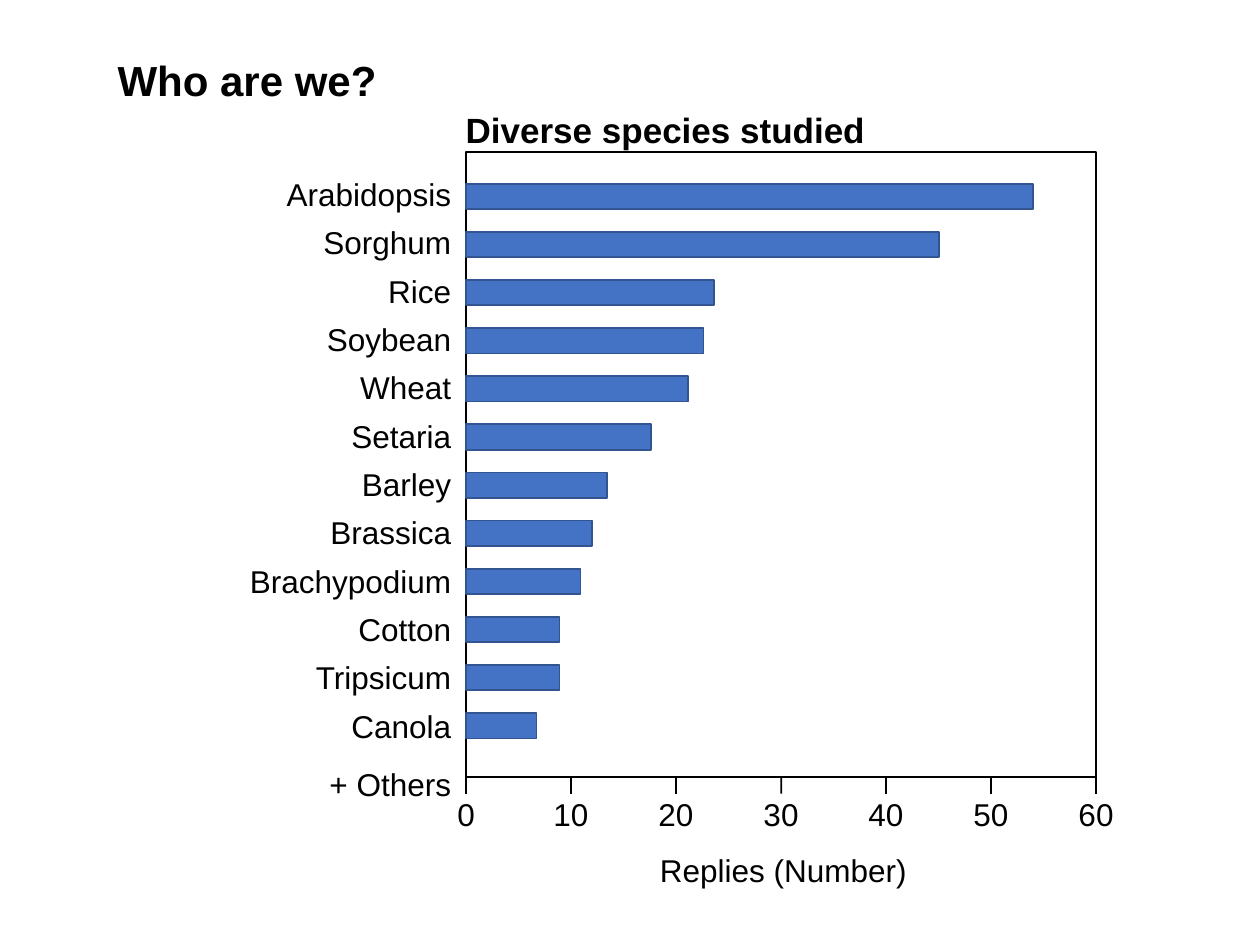
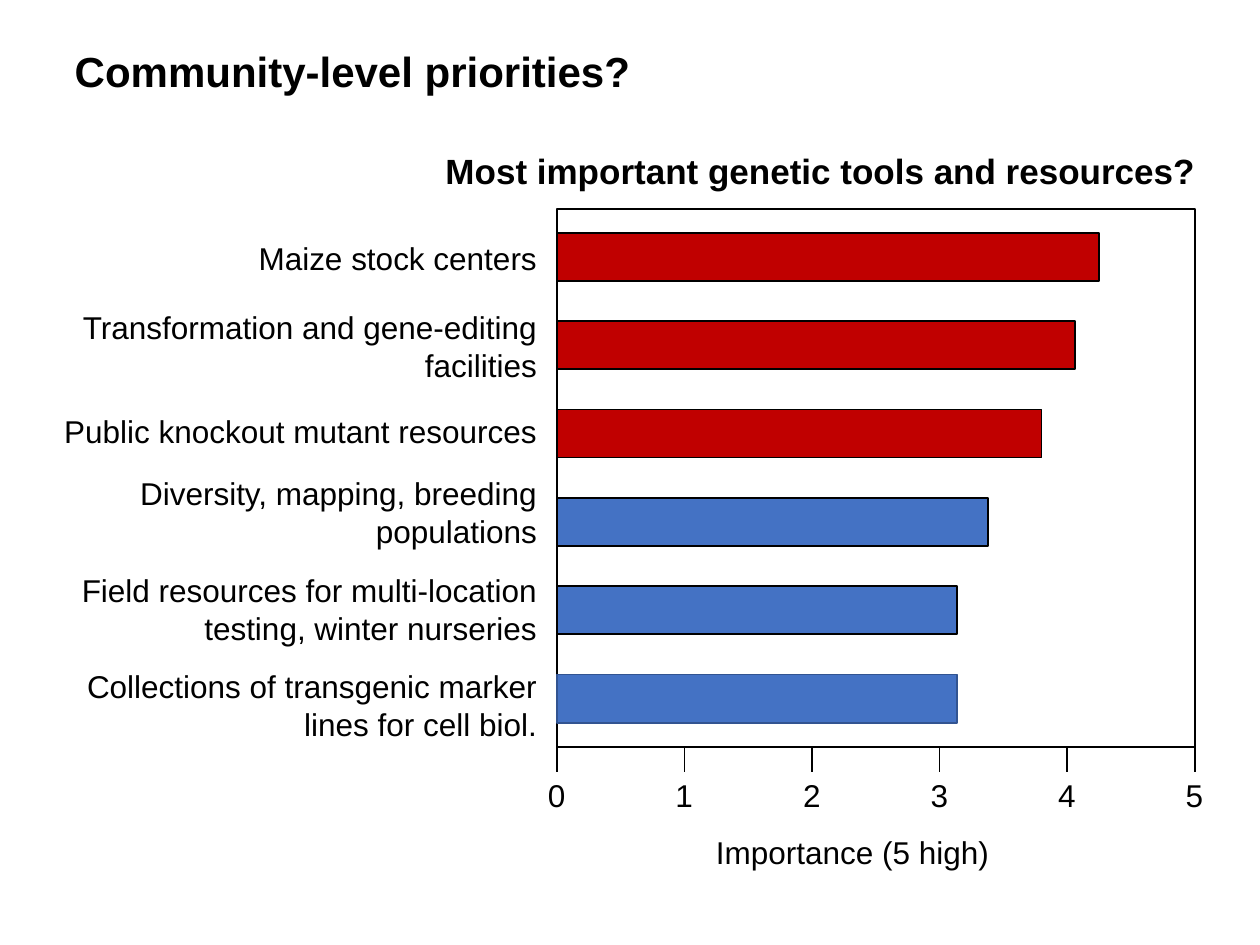
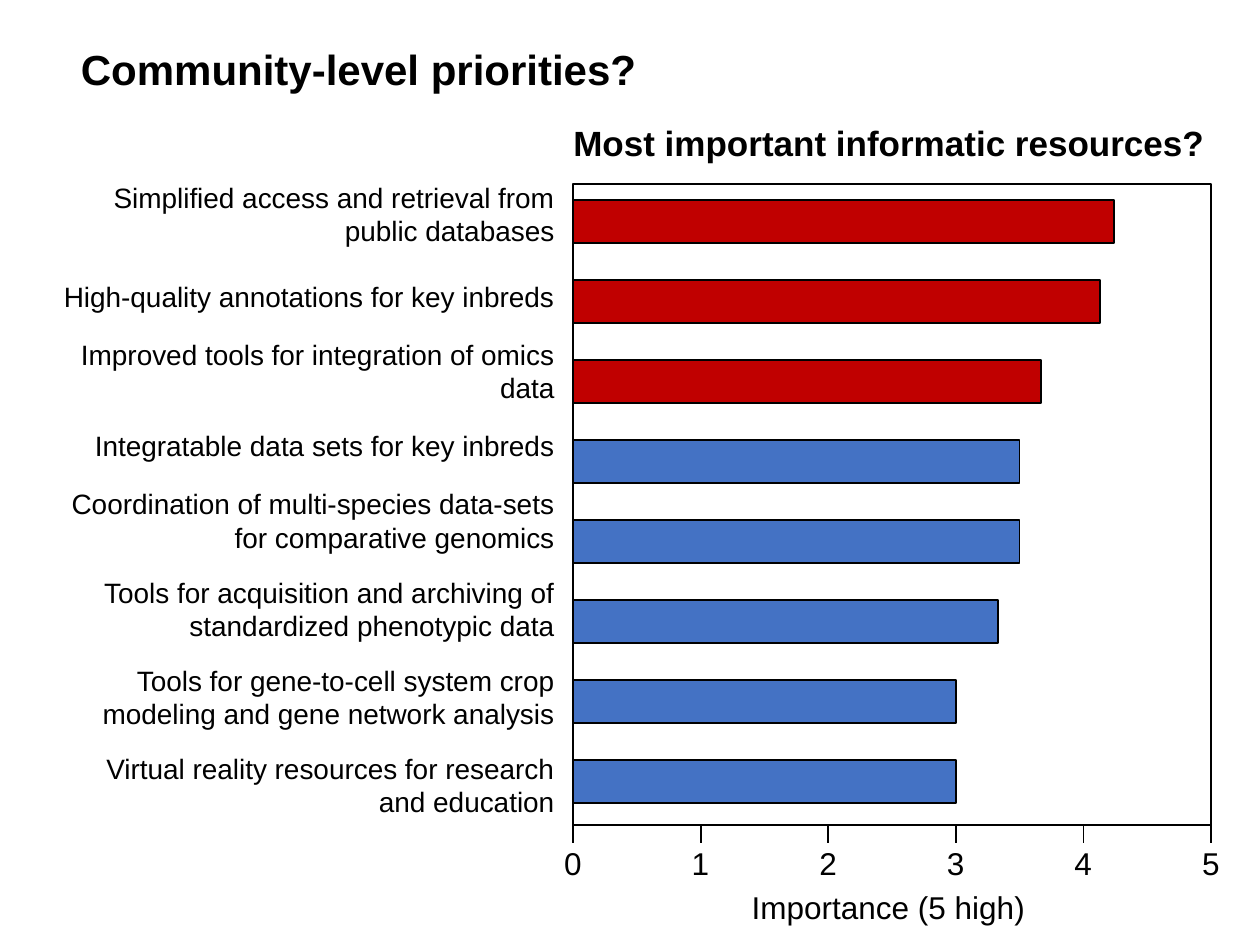
from lxml.etree import SubElement
from pptx import Presentation
from pptx.dml.color import RGBColor
from pptx.enum.shapes import MSO_CONNECTOR, MSO_SHAPE
from pptx.enum.text import MSO_ANCHOR, MSO_AUTO_SIZE, PP_ALIGN
from pptx.oxml.ns import qn
from pptx.util import Pt

COLORS = {
    "text": "000000",
    "blue": "4472C4",
    "blue_edge": "325491",
    "red": "C00000",
    "black": "000000",
}
FONT = "Arial"
TICK_MARGIN = 20
INSET = 7.2

SPECIES = [
    ("Arabidopsis", 54, 0, 6),
    ("Sorghum", 45, 0, 6),
    ("Rice", 23.6, 0, 6),
    ("Soybean", 22.6, 0, 6),
    ("Wheat", 21.1, 0, 6),
    ("Setaria", 17.6, 0, 6),
    ("Barley", 13.4, 0, 6),
    ("Brassica", 12, 0, 6),
    ("Brachypodium", 10.9, 0, 6),
    ("Cotton", 8.9, 0, 6),
    ("Tripsicum", 8.9, 0, 6),
    ("Canola", 6.7, 0, 12),
    ("+ Others", None, 0, 6),
]
GENETIC_TOOLS = [
    ("Maize stock centers", 4.25, 0, 18),
    ("Transformation and gene-editing facilities", 4.06, 0, 12),
    ("Public knockout mutant resources", 3.8, 4, 14),
    ("Diversity, mapping, breeding populations", 3.38, 0, 12),
    ("Field resources for multi-location testing, winter nurseries", 3.14, 0, 12),
    ("Collections of transgenic marker lines for cell biol.", 3.14, 0, 12),
]
INFORMATIC_RESOURCES = [
    ("Simplified access and retrieval from public databases", 4.24, 0, 12),
    ("High-quality annotations for key inbreds", 4.13, 6, 14),
    ("Improved tools for integration of omics data", 3.67, 0, 10),
    ("Integratable data sets for key inbreds", 3.5, 4, 14),
    ("Coordination of multi-species data-sets for comparative genomics", 3.5, 0, 12),
    ("Tools for acquisition and archiving of standardized phenotypic data", 3.33, 0, 12),
    ("Tools for gene-to-cell system crop modeling and gene network analysis", 3, 0, 12),
    ("Virtual reality resources for research and education", 3, 0, 12),
]

BLUE_BAR = ("blue", "blue_edge")
BLACK_EDGED_BAR = ("blue", "black")
RED_BAR = ("red", "black")

SLIDES = [
    {
        "title": ("Who are we?", (60, 27.5, 191.5, 36)),
        "heading": ("Diverse species studied", (259, 58.5, 245, 31.5)),
        "caption": ("Replies (Number)", (370, 482.5, 157, 29)),
        "rows": SPECIES,
        "labels": (130, 96.5, 135, 369.5),
        "label_size": 18,
        "plot": (266.4, 87, 360, 357),
        "bars": {"top": 105, "pitch": 27.5, "height": 14.5},
        "styles": [BLUE_BAR] * 12,
        "axis": {"maximum": 60, "step": 10, "tick": 9.5, "labels_top": 450.7},
    },
    {
        "title": ("Community-level priorities?", (35.5, 22.5, 368.5, 36)),
        "heading": ("Most important genetic tools and resources?", (247.5, 82, 457, 31.5)),
        "caption": ("Importance (5 high)", (402, 472.5, 172, 29)),
        "rows": GENETIC_TOOLS,
        "labels": (14.5, 133, 299.5, 296),
        "label_size": 18,
        "plot": (318.2, 119.5, 364.5, 307.5),
        "bars": {"top": 133, "pitch": 50.5, "height": 27.5},
        "styles": [RED_BAR] * 3 + [BLACK_EDGED_BAR] * 2 + [BLUE_BAR],
        "axis": {"maximum": 5, "step": 1, "tick": 14, "labels_top": 440},
    },
    {
        "title": ("Community-level priorities?", (39, 21, 368.5, 36)),
        "heading": ("Most important informatic resources?", (320.5, 66, 378, 31.5)),
        "caption": ("Importance (5 high)", (422.5, 504, 172, 29)),
        "rows": INFORMATIC_RESOURCES,
        "labels": (25, 99.5, 299, 388),
        "label_size": 16,
        "plot": (327.5, 105, 364.5, 366.5),
        "bars": {"top": 114.5, "pitch": 45.7, "height": 24.5},
        "styles": [RED_BAR] * 3 + [BLACK_EDGED_BAR] * 5,
        "axis": {"maximum": 5, "step": 1, "tick": 10.5, "labels_top": 479},
    },
]


def color(name):
    return RGBColor.from_string(COLORS[name])


def place(shape, box):
    shape.left, shape.top, shape.width, shape.height = map(Pt, box)


def write(shape, text, size=18, bold=False, align=PP_ALIGN.LEFT, wrap=False, spacing=None):
    frame = shape.text_frame
    frame.word_wrap = wrap
    frame.auto_size = MSO_AUTO_SIZE.NONE
    frame.vertical_anchor = MSO_ANCHOR.TOP
    frame.text = text
    for index, paragraph in enumerate(frame.paragraphs):
        before, after = spacing[index] if spacing else (0, 0)
        paragraph.alignment = align
        paragraph.space_before, paragraph.space_after = Pt(before), Pt(after)
        font = paragraph.runs[0].font
        font.name, font.size, font.bold = FONT, Pt(size), bold
        font.color.rgb = color("text")


def add_text(slide, text, box, **formatting):
    shape = slide.shapes.add_textbox(*map(Pt, box))
    write(shape, text, **formatting)
    return shape


def add_rectangle(slide, box, fill, edge):
    rectangle = slide.shapes.add_shape(MSO_SHAPE.RECTANGLE, *map(Pt, box))
    rectangle.shadow.inherit = False
    if fill:
        rectangle.fill.solid()
        rectangle.fill.fore_color.rgb = color(fill)
    else:
        rectangle.fill.background()
    rectangle.line.color.rgb = color(edge)
    rectangle.line.width = Pt(1)
    return rectangle


def add_labels(slide, content):
    body = slide.placeholders[1]
    place(body, content["labels"])
    rows = content["rows"]
    write(body, "\n".join(row[0] for row in rows), size=content["label_size"],
          align=PP_ALIGN.RIGHT, wrap=True, spacing=[row[2:] for row in rows])
    for paragraph in body.text_frame.paragraphs:
        properties = paragraph._p.get_or_add_pPr()
        properties.set("marL", "0")
        properties.set("indent", "0")
        SubElement(properties, qn("a:buNone"))


def add_bars(slide, content):
    left, _, width, _ = content["plot"]
    bars = content["bars"]
    unit = width / content["axis"]["maximum"]
    for index, (row, style) in enumerate(zip(content["rows"], content["styles"])):
        top = bars["top"] + index * bars["pitch"]
        add_rectangle(slide, (left, top, row[1] * unit, bars["height"]), *style)


def add_axis(slide, content, plot_frame):
    left, top, width, height = content["plot"]
    axis = content["axis"]
    bottom = top + height
    values = range(0, axis["maximum"] + 1, axis["step"])
    offsets = [width * value / axis["maximum"] for value in values]
    for value, offset in zip(values, offsets):
        x = left + offset
        tick = slide.shapes.add_connector(
            MSO_CONNECTOR.STRAIGHT, Pt(x), Pt(bottom), Pt(x), Pt(bottom + axis["tick"]))
        tick.line.color.rgb = color("black")
        tick.line.width = Pt(1)
        SubElement(tick._element.spPr, qn("a:effectLst"))
        if value * 2 == axis["maximum"]:
            tick.begin_connect(plot_frame, 2)

    margin = TICK_MARGIN + INSET
    numbers = add_text(slide, "".join(f"\t{value}" for value in values),
                       (left - margin, axis["labels_top"], width + 2 * margin, 29), wrap=True)
    properties = numbers.text_frame.paragraphs[0]._p.get_or_add_pPr()
    tabs = SubElement(properties, qn("a:tabLst"))
    for offset in offsets:
        SubElement(tabs, qn("a:tab"), pos=str(Pt(TICK_MARGIN + offset)), algn="ctr")


def add_chart_slide(presentation, content):
    slide = presentation.slides.add_slide(presentation.slide_layouts[1])
    title, title_box = content["title"]
    place(slide.shapes.title, title_box)
    write(slide.shapes.title, title, size=24, bold=True)
    add_text(slide, *content["heading"], size=20, bold=True)
    add_labels(slide, content)
    plot_frame = add_rectangle(slide, content["plot"], None, "black")
    add_bars(slide, content)
    add_axis(slide, content, plot_frame)
    add_text(slide, *content["caption"])


def main():
    presentation = Presentation()
    presentation.slide_width, presentation.slide_height = Pt(720), Pt(540)
    for content in SLIDES:
        add_chart_slide(presentation, content)
    presentation.save("out.pptx")


if __name__ == "__main__":
    main()
